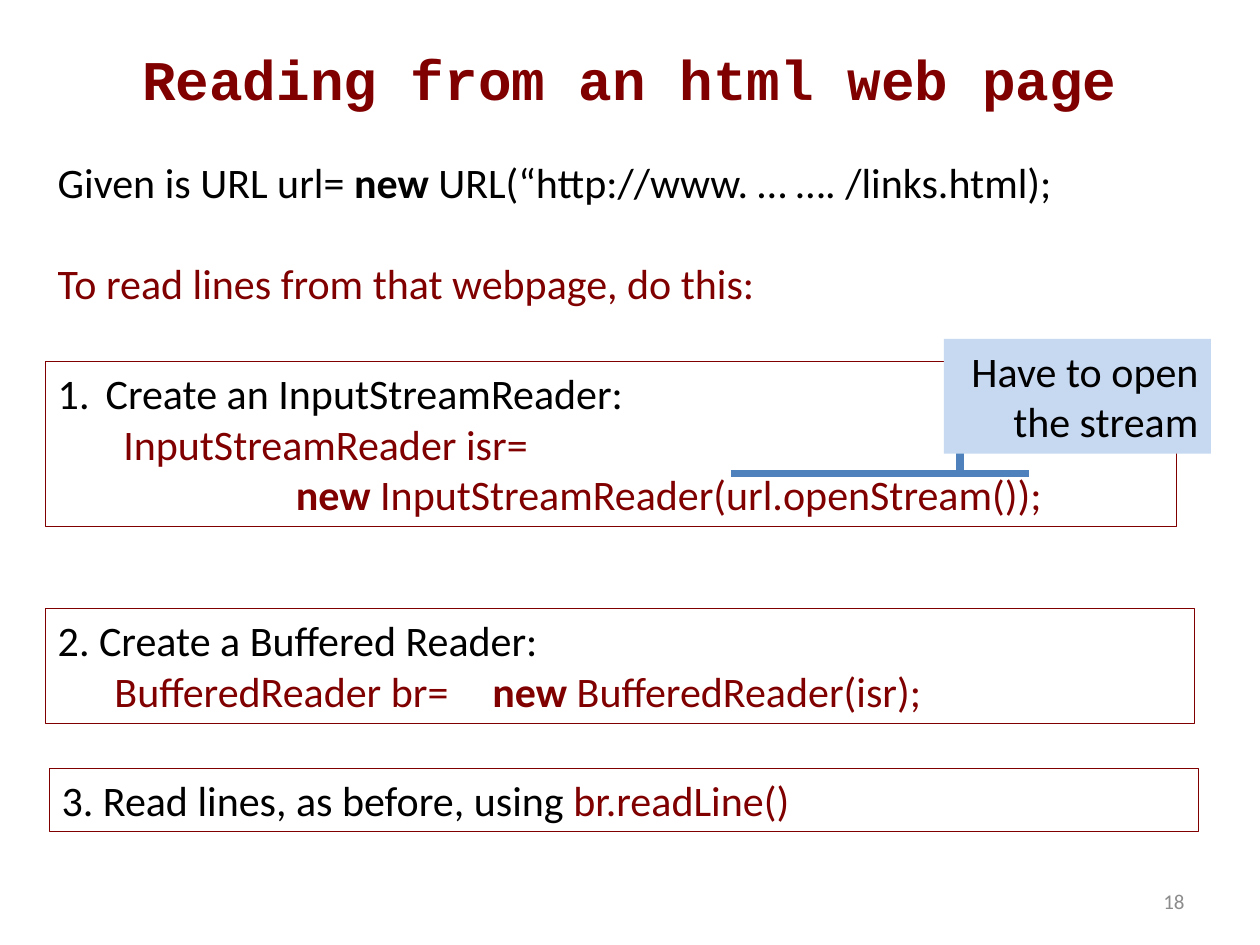
from pptx import Presentation
from pptx.dml.color import RGBColor
from pptx.enum.shapes import MSO_CONNECTOR as Conn, MSO_SHAPE as Shape
from pptx.enum.text import MSO_ANCHOR as Anchor, PP_ALIGN as Align
from pptx.oxml.ns import qn
from pptx.util import Inches, Pt
from lxml.etree import SubElement

MAROON = RGBColor(0x80, 0x00, 0x00)
BLACK = RGBColor(0x00, 0x00, 0x00)
GRAY = RGBColor(0x8C, 0x8C, 0x8C)
BLUE = RGBColor(0x4F, 0x81, 0xBD)
PALE = RGBColor(0xC6, 0xD9, 0xF1)


def write(frame, text, first=False, size=24, font="Calibri", color=BLACK,
          bold=False, align=Align.LEFT, indent=0, after=0, number=False, tab=0):
    frame.word_wrap = True
    para = frame.paragraphs[0] if first else frame.add_paragraph()
    para.alignment = align
    para.space_after = Pt(after)
    props = para._p.get_or_add_pPr()
    props.set("marL", str(Inches(indent)))
    props.set("indent", str(-Inches(indent) if number else 0))
    if number:
        SubElement(props, qn("a:buFont"), typeface="+mj-lt")
        SubElement(props, qn("a:buAutoNum"), type="arabicPeriod")
    if tab:
        stops = SubElement(props, qn("a:tabLst"))
        SubElement(stops, qn("a:tab"), pos=str(Inches(tab)), algn="l")
    parts = [(text, color, bold)] if isinstance(text, str) else text
    for words, shade, heavy in parts:
        run = para.add_run()
        run.text = words
        run.font.size = Pt(size)
        run.font.name = font
        run.font.bold = heavy
        run.font.color.rgb = shade


def add_box(shapes, left, top, width, height, fill=None, line=MAROON):
    box = shapes.add_shape(Shape.RECTANGLE, Inches(left), Inches(top),
                           Inches(width), Inches(height))
    box.shadow.inherit = False
    if fill is None:
        box.fill.background()
    else:
        box.fill.solid()
        box.fill.fore_color.rgb = fill
    if line is None:
        box.line.fill.background()
    else:
        box.line.color.rgb = line
        box.line.width = Pt(0.75)
    box.text_frame.vertical_anchor = Anchor.TOP
    return box.text_frame


deck = Presentation()
deck.slide_width, deck.slide_height = Inches(10), Inches(7.5)
slide = deck.slides.add_slide(deck.slide_layouts[6])
shapes = slide.shapes

title = shapes.add_textbox(Inches(0.5), Inches(0.3), Inches(9), Inches(0.64)).text_frame
title.vertical_anchor = Anchor.MIDDLE
write(title, "Reading from an html web page", first=True, size=32,
      font="Courier New", color=MAROON, bold=True, align=Align.CENTER)

intro = shapes.add_textbox(Inches(0.36), Inches(1.19), Inches(8.77), Inches(1.31)).text_frame
write(intro, [("Given is URL url= ", BLACK, False), ("new", BLACK, True),
              (" URL(“http://www. … …. /links.html);", BLACK, False)],
      first=True, after=29)
write(intro, "To read lines from that webpage, do this:", color=MAROON)

page = shapes.add_textbox(Inches(7.17), Inches(6.95), Inches(2.33), Inches(0.4)).text_frame
page.vertical_anchor = Anchor.MIDDLE
write(page, "18", first=True, size=12, color=GRAY, align=Align.RIGHT)

group = shapes.add_group_shape().shapes
step = add_box(group, 0.36, 2.87, 8.98, 1.31)
write(step, "Create an InputStreamReader:", first=True, indent=0.38, number=True)
write(step, "InputStreamReader isr=", color=MAROON, indent=0.52)
write(step, [("new ", MAROON, True),
             ("InputStreamReader(url.openStream());", MAROON, False)], indent=1.89)

for x1, y1, x2, y2 in [(5.8, 3.76, 8.17, 3.76), (7.62, 3.78, 7.62, 3.43)]:
    rule = group.add_connector(Conn.STRAIGHT, Inches(x1), Inches(y1), Inches(x2), Inches(y2))
    rule.line.color.rgb = BLUE
    rule.line.width = Pt(4.25)
    SubElement(rule._element.spPr, qn("a:effectLst"))

hint = add_box(group, 7.49, 2.69, 2.12, 0.91, fill=PALE, line=None)
write(hint, "Have to open the stream", first=True, align=Align.RIGHT)

step = add_box(shapes, 0.36, 4.83, 9.12, 0.91)
write(step, "2. Create a Buffered Reader:", first=True)
write(step, [("BufferedReader br=\t", MAROON, False), ("new ", MAROON, True),
             ("BufferedReader(isr);", MAROON, False)], indent=0.45, tab=3.33)

step = add_box(shapes, 0.39, 6.1, 9.12, 0.5)
write(step, [("3. Read lines, as before, using ", BLACK, False),
             ("br.readLine()", MAROON, False)], first=True)

deck.save("out.pptx")
